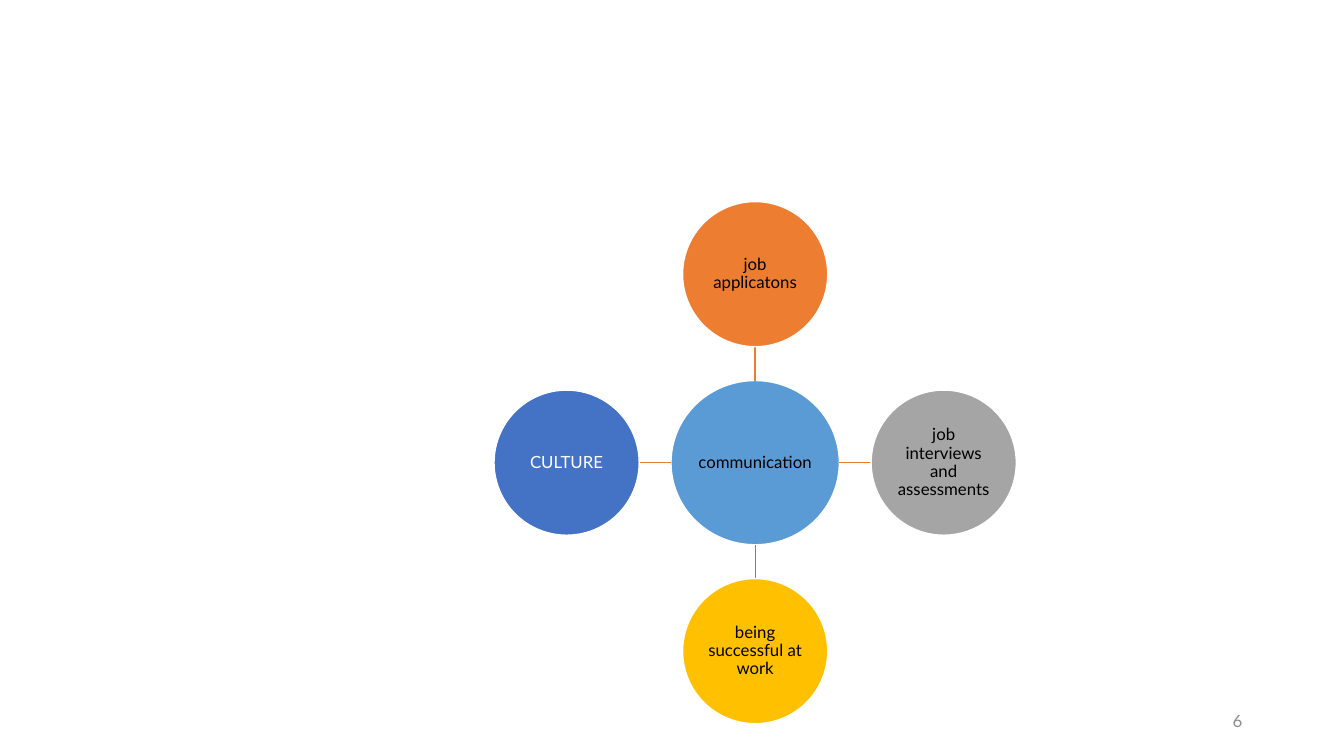
from lxml.etree import SubElement
from pptx import Presentation
from pptx.dml.color import RGBColor
from pptx.enum.shapes import MSO_CONNECTOR, MSO_SHAPE
from pptx.enum.text import MSO_ANCHOR, PP_ALIGN
from pptx.oxml.ns import qn
from pptx.util import Inches, Pt


def color(hex_string):
    return RGBColor.from_string(hex_string)


class DiagramSlide:
    font_name = "Lato"
    font_size = Pt(12)

    def __init__(self, presentation):
        self.slide = presentation.slides.add_slide(presentation.slide_layouts[6])

    def set_text(self, shape, text, text_color, alignment):
        text_frame = shape.text_frame
        text_frame.word_wrap = True
        text_frame.vertical_anchor = MSO_ANCHOR.MIDDLE
        paragraph = text_frame.paragraphs[0]
        paragraph.text = text
        paragraph.alignment = alignment
        paragraph.font.name = self.font_name
        paragraph.font.size = self.font_size
        paragraph.font.color.rgb = color(text_color)
        return text_frame

    def circle(self, center_x, center_y, width, height, text, fill, text_color):
        shape = self.slide.shapes.add_shape(
            MSO_SHAPE.OVAL,
            Inches(center_x - width / 2), Inches(center_y - height / 2),
            Inches(width), Inches(height),
        )
        shape.shadow.inherit = False
        shape.fill.solid()
        shape.fill.fore_color.rgb = color(fill)
        shape.line.color.rgb = color("FFFFFF")
        shape.line.width = Pt(1)
        text_frame = self.set_text(shape, text, text_color, PP_ALIGN.CENTER)
        text_frame.margin_left = text_frame.margin_right = Inches(0.01)
        text_frame.margin_top = text_frame.margin_bottom = Inches(0.01)
        text_frame.paragraphs[0].line_spacing = 0.9

    def spoke(self, start_x, start_y, end_x, end_y, line_color, width):
        connector = self.slide.shapes.add_connector(
            MSO_CONNECTOR.STRAIGHT,
            Inches(start_x), Inches(start_y), Inches(end_x), Inches(end_y),
        )
        connector.line.color.rgb = color(line_color)
        connector.line.width = Pt(width)
        SubElement(connector._element.spPr, qn("a:effectLst"))

    def label(self, left, top, width, height, text, text_color):
        box = self.slide.shapes.add_textbox(
            Inches(left), Inches(top), Inches(width), Inches(height)
        )
        self.set_text(box, text, text_color, PP_ALIGN.RIGHT)


HUB_X, HUB_Y = 7.49, 4.59
HUB_WIDTH, HUB_HEIGHT = 1.67, 1.63
TOPIC_SIZE = 1.44
TOPIC_DISTANCE = 1.87
TOPICS = [
    (0, -1, "job applicatons", "ED7D31", "000000", "ED7D31", 1),
    (1, 0, "job interviews and assessments", "A5A5A5", "000000", "ED7D31", 1),
    (0, 1, "being successful at work", "FFC000", "000000", "808080", 0.5),
    (-1, 0, "CULTURE", "4472C4", "FFFFFF", "ED7D31", 1),
]


def main():
    presentation = Presentation()
    presentation.slide_width = Inches(13.33)
    presentation.slide_height = Inches(7.5)
    diagram = DiagramSlide(presentation)

    diagram.circle(HUB_X, HUB_Y, HUB_WIDTH, HUB_HEIGHT, "communication", "5B9BD5", "000000")
    reach = TOPIC_DISTANCE - TOPIC_SIZE / 2
    for step_x, step_y, text, fill, text_color, line_color, line_width in TOPICS:
        diagram.spoke(
            HUB_X + step_x * HUB_WIDTH / 2, HUB_Y + step_y * HUB_HEIGHT / 2,
            HUB_X + step_x * reach, HUB_Y + step_y * reach,
            line_color, line_width,
        )
        diagram.circle(
            HUB_X + step_x * TOPIC_DISTANCE, HUB_Y + step_y * TOPIC_DISTANCE,
            TOPIC_SIZE, TOPIC_SIZE, text, fill, text_color,
        )
    diagram.label(9.42, 6.95, 3, 0.4, "6", "8C8C8C")

    presentation.save("out.pptx")


if __name__ == "__main__":
    main()
